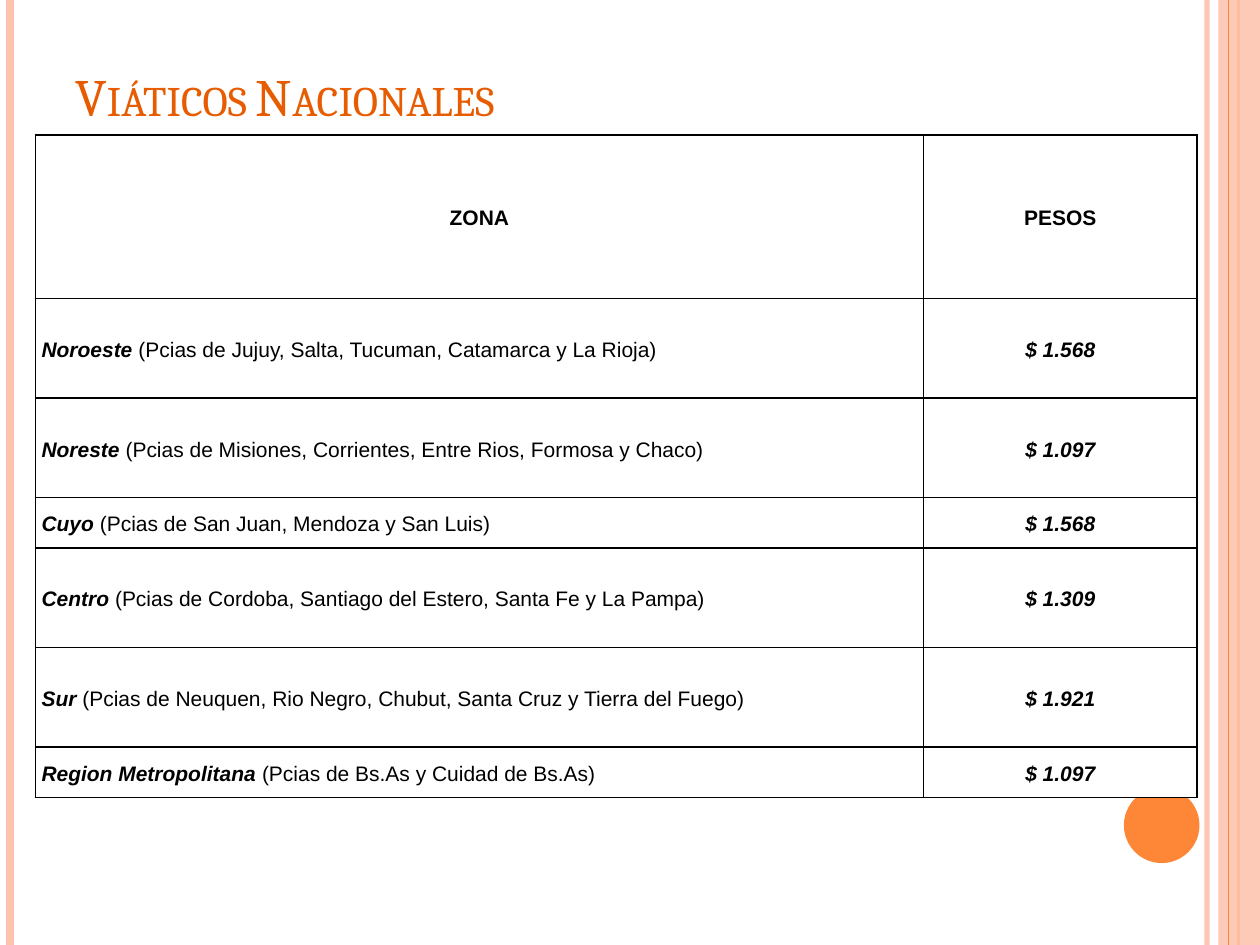
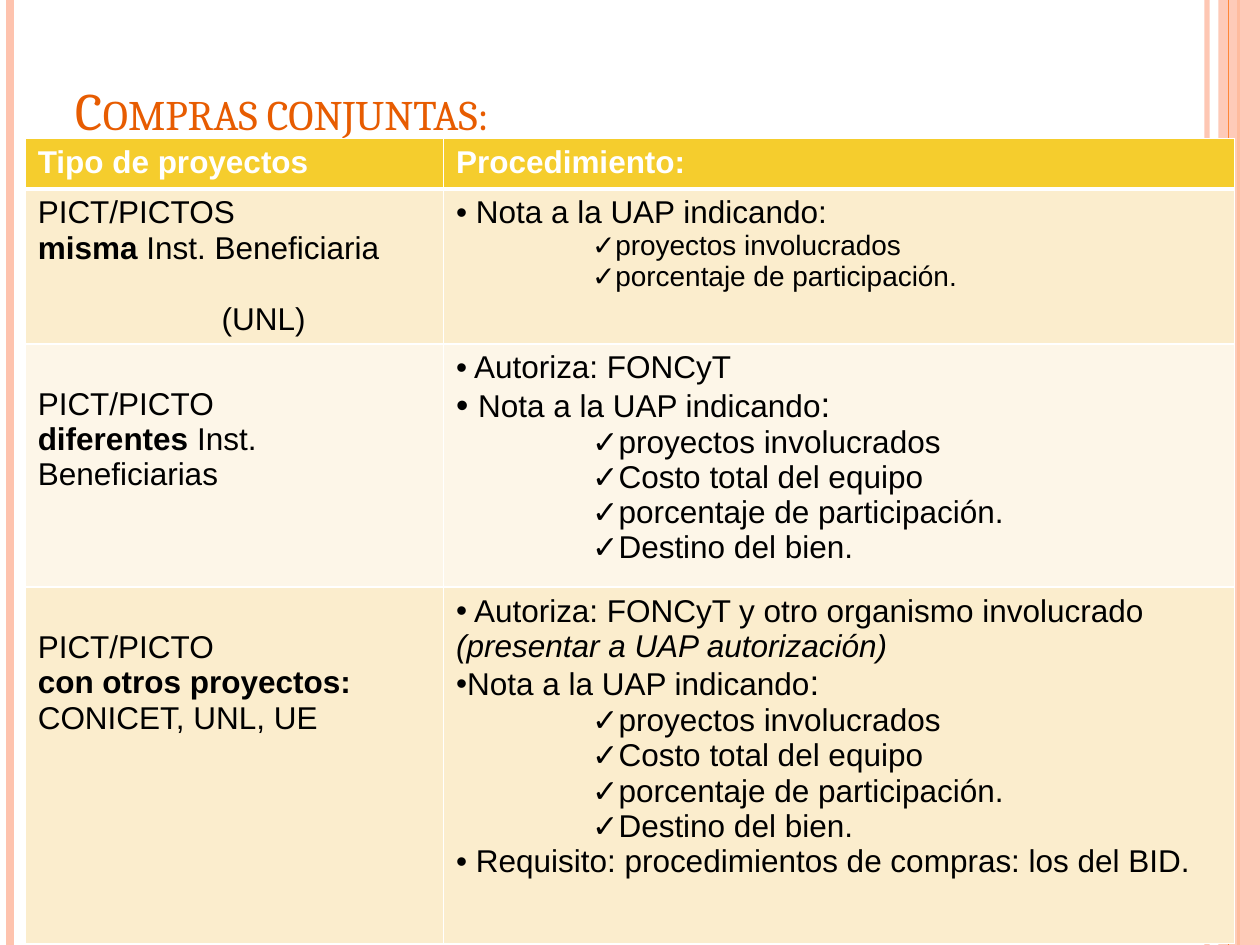
from lxml import etree
from pptx import Presentation
from pptx.dml.color import RGBColor
from pptx.enum.shapes import MSO_CONNECTOR, MSO_SHAPE
from pptx.enum.text import MSO_ANCHOR, MSO_AUTO_SIZE, PP_ALIGN
from pptx.oxml.ns import qn
from pptx.util import Inches, Pt

STRAIGHT = MSO_CONNECTOR.STRAIGHT
RECTANGLE, OVAL = MSO_SHAPE.RECTANGLE, MSO_SHAPE.OVAL
LEFT, CENTER = PP_ALIGN.LEFT, PP_ALIGN.CENTER
TOP, MIDDLE, BOTTOM = MSO_ANCHOR.TOP, MSO_ANCHOR.MIDDLE, MSO_ANCHOR.BOTTOM
NO_AUTOFIT = MSO_AUTO_SIZE.NONE

COLORS = {
    "title": "E75C01", "accent": "FE8637", "band": "FEC3AE",
    "black": "000000", "white": "FFFFFF",
    "header": "F5CD2D", "row_dark": "FBEDCD", "row_light": "FDF6E8",
}
TITLE_FONT, BODY_FONT = "Cambria", "Arial"
BOLD, ITALIC, LARGE = {"bold": True}, {"italic": True}, {"size": Pt(20)}
BOLD_ITALIC = {**BOLD, **ITALIC}


def rgb(name):
    return RGBColor.from_string(COLORS[name])


def apply(target, formats):
    for name, value in formats.items():
        setattr(target, name, value)


def set_opacity(shape, percent):
    color = next(shape._element.spPr.iter(qn("a:srgbClr")))
    etree.SubElement(color, qn("a:alpha")).set("val", str(percent * 1000))


class Deck:
    """Holds the presentation, its style and the current slide."""

    def __init__(self):
        self.presentation = Presentation()
        self.presentation.slide_width = Inches(10)
        self.presentation.slide_height = Inches(7.5)
        self.slide = None

    def new_slide(self, title, box, bottom_inset=0.05):
        layout = self.presentation.slide_layouts[5]
        self.slide = self.presentation.slides.add_slide(layout)
        self.decoration()
        self.title(title, box, bottom_inset)

    def decoration(self):
        """Side bands and the corner disc."""
        self.vertical_line(9.58, "band", 3, opacity=93)
        self.vertical_line(0.08, "band", 4.5)
        self.vertical_line(9.83, "accent", 1.5)
        self.shape(RECTANGLE, (9.67, 0, 0.33, 7.5), "band", opacity=87)
        self.vertical_line(9.75, "accent", 0.75)
        self.shape(OVAL, (8.92, 6.25, 0.6, 0.6), "accent")

    def title(self, text, box, bottom_inset):
        shape = self.slide.shapes.title
        apply(shape, dict(zip(("left", "top", "width", "height"), map(Inches, box))))
        frame = shape.text_frame
        apply(frame, {"text": text, "word_wrap": True, "auto_size": NO_AUTOFIT,
                      "vertical_anchor": BOTTOM, "margin_bottom": Inches(bottom_inset)})
        paragraph = frame.paragraphs[0]
        paragraph.alignment = LEFT
        font = paragraph.runs[0].font
        apply(font, {"name": TITLE_FONT, "size": Pt(30)})
        font.color.rgb = rgb("title")
        font._element.set("cap", "small")

    def vertical_line(self, x, color, width, opacity=None):
        line = self.slide.shapes.add_connector(
            STRAIGHT, Inches(x), Inches(0), Inches(x), Inches(7.5))
        line.line.color.rgb = rgb(color)
        line.line.width = Pt(width)
        etree.SubElement(line._element.spPr, qn("a:effectLst"))
        if opacity:
            set_opacity(line, opacity)

    def shape(self, kind, box, color, opacity=None):
        shape = self.slide.shapes.add_shape(kind, *map(Inches, box))
        shape.shadow.inherit = False
        shape.fill.solid()
        shape.fill.fore_color.rgb = rgb(color)
        shape.line.fill.background()
        if opacity:
            set_opacity(shape, opacity)

    def table(self, position, columns, rows):
        left, top = position
        frame = self.slide.shapes.add_table(
            len(rows), len(columns), Inches(left), Inches(top),
            Inches(sum(columns)), Inches(sum(rows)))
        table = frame.table
        apply(table, {"first_row": False, "horz_banding": False})
        for column, width in zip(table.columns, columns):
            column.width = Inches(width)
        for row, height in zip(table.rows, rows):
            row.height = Inches(height)
        return table

    def cell(self, cell, paragraphs, fill, border, formats, font, color="black", widths=None):
        """Fills a cell; each paragraph is a (runs, paragraph options) pair."""
        apply(cell, formats)
        self.borders(cell, border, widths or {})
        cell.fill.solid()
        cell.fill.fore_color.rgb = rgb(fill)
        frame = cell.text_frame
        for index, (runs, options) in enumerate(paragraphs):
            paragraph = frame.add_paragraph() if index else frame.paragraphs[0]
            self.paragraph(paragraph, runs, font, color, **options)

    def borders(self, cell, color, widths):
        properties = cell._tc.get_or_add_tcPr()
        for side in "LRTB":
            line = etree.SubElement(properties, qn(f"a:ln{side}"))
            line.set("w", str(Pt(widths.get(side, 1))))
            solid = etree.SubElement(line, qn("a:solidFill"))
            etree.SubElement(solid, qn("a:srgbClr")).set("val", COLORS[color])

    def paragraph(self, paragraph, runs, font, color, bullet=None, indent=0, **formats):
        apply(paragraph, formats)
        properties = paragraph._p.get_or_add_pPr()
        properties.set("marL", str(Inches(indent)))
        properties.set("indent", "0")
        if bullet:
            etree.SubElement(properties, qn("a:buFont")).set("typeface", BODY_FONT)
            etree.SubElement(properties, qn("a:buChar")).set("char", bullet)
        for text, changes in runs:
            run = paragraph.add_run()
            run.text = text
            apply(run.font, {"name": BODY_FONT, "bold": False, "italic": False,
                             **font, **changes})
            run.font.color.rgb = rgb(color)


def line(*runs, **options):
    """A paragraph made of plain strings or (text, font changes) pairs."""
    return [(run, {}) if isinstance(run, str) else run for run in runs], options


def dot(*runs):
    return line(*runs, bullet="•")


def checks(*texts, **font):
    return [line((text, font), bullet="✓", indent=1.08) for text in texts]


def allowances_slide(deck):
    deck.new_slide("Viáticos Nacionales", (0.5, 0.3, 8.17, 1.25), bottom_inset=0.54)
    zones = [
        ("Noroeste", "Pcias de Jujuy, Salta, Tucuman, Catamarca y La Rioja", "1.568", 0.79),
        ("Noreste", "Pcias de Misiones, Corrientes, Entre Rios, Formosa y Chaco", "1.097", 0.79),
        ("Cuyo", "Pcias de San Juan, Mendoza y San Luis", "1.568", 0.4),
        ("Centro", "Pcias de Cordoba, Santiago del Estero, Santa Fe y La Pampa", "1.309", 0.79),
        ("Sur", "Pcias de Neuquen, Rio Negro, Chubut, Santa Cruz y Tierra del Fuego", "1.921", 0.79),
        ("Region Metropolitana", "Pcias de Bs.As y Cuidad de Bs.As", "1.097", 0.4),
    ]
    centered = {"alignment": CENTER, "line_spacing": 1.15}
    rows = [[line((text, BOLD), **centered) for text in ("ZONA", "PESOS")]]
    for zone, provinces, pesos, _ in zones:
        rows.append([line((zone, BOLD_ITALIC), f" ({provinces})", line_spacing=1.15),
                     line((f"$ {pesos}", BOLD_ITALIC), **centered)])
    formats = {"vertical_anchor": MIDDLE, "margin_left": Inches(0.05),
               "margin_right": Inches(0.05), "margin_top": 0, "margin_bottom": 0}
    table = deck.table((0.28, 1.07), [7.05, 2.17], [1.3] + [zone[3] for zone in zones])
    for row, contents in zip(table.rows, rows):
        for cell, content in zip(row.cells, contents):
            deck.cell(cell, [content], "white", "black", formats, {"size": Pt(12)})


def purchases_slide(deck):
    deck.new_slide("Compras conjuntas:", (0.5, 0.3, 9, 0.87))
    table = deck.table((0.2, 1.1), [3.32, 6.28], [0.4, 1.23, 1.93, 2.83])
    request = ("Nota a la UAP indicando", (":", LARGE))
    details = checks("proyectos involucrados", "Costo total del equipo",
                     "porcentaje de participación.", "Destino del bien.")
    # Each row: fill, top margin of the first cell, then the two cells
    rows = [
        ("header", 0.05,
         [line(("Tipo de proyectos", BOLD))],
         [line(("Procedimiento:", BOLD))]),
        ("row_dark", 0.05,
         [line("PICT/PICTOS"),
          line(("misma ", BOLD), "Inst. Beneficiaria"),
          line("(UNL)", indent=1.46, space_before=Pt(20.5))],
         [dot(" Nota a la UAP indicando:"),
          *checks("proyectos involucrados", "porcentaje de participación.", size=Pt(16))]),
        ("row_light", 0.34,
         [line("PICT/PICTO"), line(("diferentes", BOLD), " Inst. Beneficiarias")],
         [dot(" Autoriza: FONCyT"), dot((" ", LARGE), *request), *details]),
        ("row_dark", 0.34,
         [line("PICT/PICTO"),
          line(("con otros proyectos: ", BOLD), "CONICET, UNL, UE")],
         [dot(" Autoriza: FONCyT y otro organismo involucrado ",
              ("(presentar a UAP autorización)", ITALIC)),
          dot(*request), *details,
          dot(" Requisito: procedimientos de compras: los del BID.")]),
    ]
    # A thick rule separates the header from the first row
    rules = {0: {"B": 3}, 1: {"T": 3}}
    for index, (fill, top_margin, *contents) in enumerate(rows):
        color = "white" if fill == "header" else "black"
        margins = (top_margin, 0.05)
        for cell, content, margin in zip(table.rows[index].cells, contents, margins):
            formats = {"vertical_anchor": TOP, "margin_top": Inches(margin)}
            deck.cell(cell, content, fill, "white", formats, {"size": Pt(18)},
                      color, rules.get(index))


def main():
    deck = Deck()
    allowances_slide(deck)
    purchases_slide(deck)
    deck.presentation.save("out.pptx")


if __name__ == "__main__":
    main()
